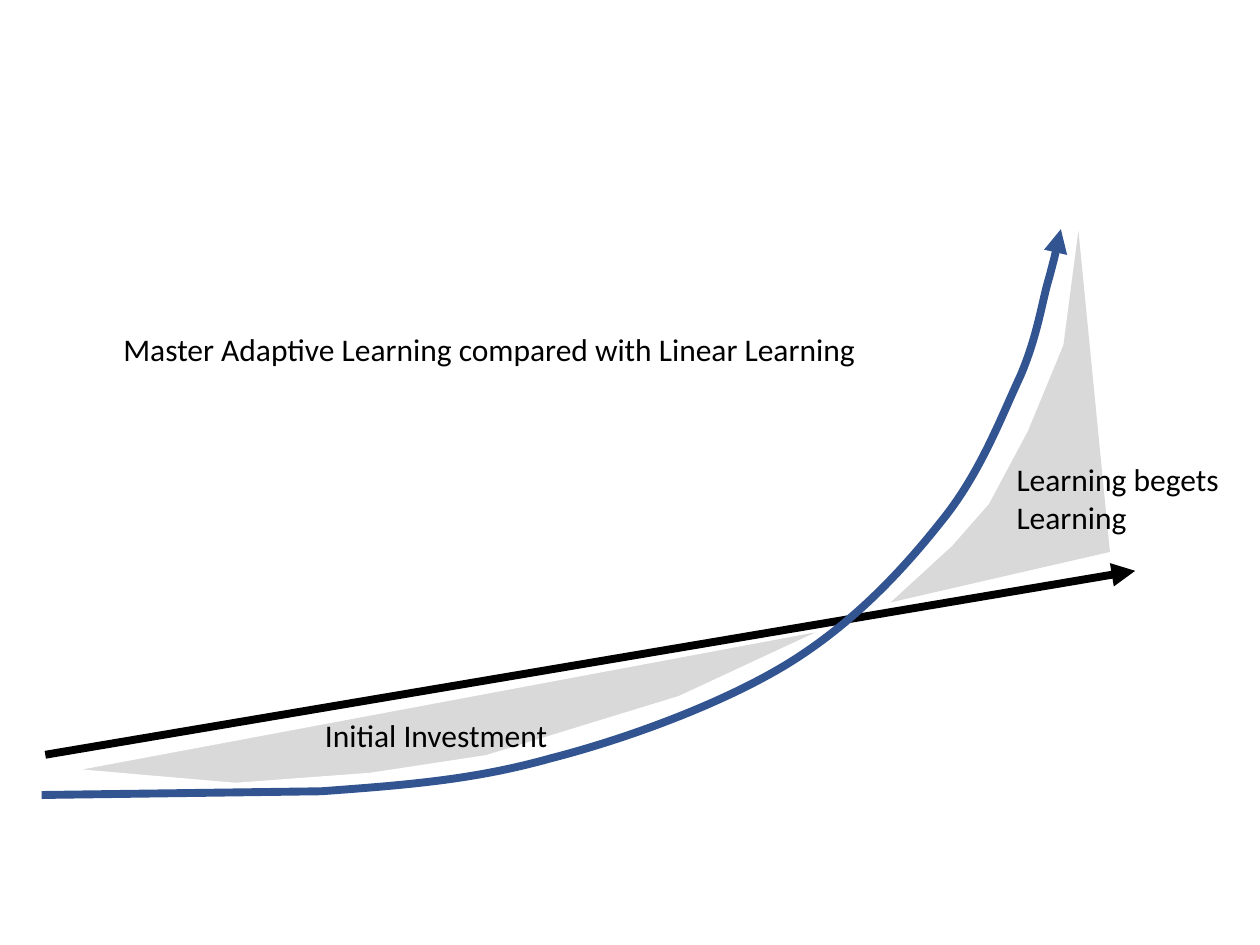
from dataclasses import dataclass

from lxml import etree
from pptx import Presentation
from pptx.dml.color import RGBColor
from pptx.enum.shapes import MSO_CONNECTOR
from pptx.enum.text import MSO_AUTO_SIZE
from pptx.oxml.ns import qn
from pptx.util import Pt

STRAIGHT = MSO_CONNECTOR.STRAIGHT
GROW = MSO_AUTO_SIZE.SHAPE_TO_FIT_TEXT
Point = tuple[float, float]


@dataclass(frozen=True)
class Theme:
    black: str = "000000"
    blue: str = "325491"
    gray: str = "D9D9D9"
    white: str = "FFFFFF"
    font: str = "Calibri"
    size: float = 18
    thick: float = 4.5
    thin: float = 1


@dataclass(frozen=True)
class Label:
    text: str
    left: float
    top: float
    width: float
    height: float
    wrap: bool = True


@dataclass(frozen=True)
class Region:
    points: list[Point]
    edge: str | None = None


THEME = Theme()

LINEAR = [(25.9, 431.3), (648.7, 326.2)]

# A start, the end of a straight run, then three points for each Bezier arc.
ADAPTIVE = [
    (23.8, 454.3), (183.6, 452.2),
    (232.6, 448.6), (270.7, 445.7), (314.6, 433.4),
    (359.3, 421.9), (413.3, 401.8), (450, 379.4),
    (487.4, 356.4), (515.5, 326.2), (537.8, 298.1),
    (560.2, 270.7), (572.4, 237.6), (583.2, 214.6),
    (593.3, 190.8), (595.4, 172.1), (599.8, 157.7),
    (603.4, 144), (604.8, 137.5), (606.2, 131),
]

REGIONS = [
    Region([(43.2, 439.9), (470.2, 360), (388.1, 398.2), (277.9, 432),
            (211.7, 442.1), (134.6, 447.8)], edge=THEME.white),
    Region([(509, 344.2), (634.3, 315.4), (616.3, 131.8), (607.7, 197.3),
            (587.5, 246.2), (565.2, 288), (544.3, 311.8)]),
]

LABELS = [
    Label("Master Adaptive Learning compared with Linear Learning",
          63.4, 185, 434.2, 29, wrap=False),
    Label("Initial Investment", 178.6, 405.4, 318.2, 29),
    Label("Learning begets Learning", 573.8, 259.2, 174.2, 51),
]


def rgb(code: str) -> RGBColor:
    return RGBColor.from_string(code)


def stroke(shape, color: str, width: float, arrow: bool = False) -> None:
    shape.line.color.rgb = rgb(color)
    shape.line.width = Pt(width)
    if arrow:
        line = shape.line._get_or_add_ln()
        etree.SubElement(line, qn("a:tailEnd"), type="triangle")


def outline(slide, points: list[Point], close: bool):
    first, *rest = [(Pt(x), Pt(y)) for x, y in points]
    pen = slide.shapes.build_freeform(*first)
    pen.add_line_segments(rest, close=close)
    shape = pen.convert_to_shape()
    shape.shadow.inherit = False
    return shape


def bend(shape) -> None:
    """Turn every three line segments after the first into one Bezier arc."""
    path = shape._element.spPr.find(".//" + qn("a:path"))
    steps = path.findall(qn("a:lnTo"))[1:]
    for i in range(0, len(steps), 3):
        arc = etree.SubElement(path, qn("a:cubicBezTo"))
        for step in steps[i:i + 3]:
            arc.append(step[0])
            path.remove(step)


def draw_line(slide, points: list[Point]) -> None:
    start, end = points
    line = slide.shapes.add_connector(
        STRAIGHT, *(Pt(v) for v in start + end))
    stroke(line, THEME.black, THEME.thick, arrow=True)
    etree.SubElement(line._element.spPr, qn("a:effectLst"))


def draw_curve(slide, points: list[Point]) -> None:
    curve = outline(slide, points, close=False)
    bend(curve)
    curve.fill.background()
    stroke(curve, THEME.blue, THEME.thick, arrow=True)


def draw_region(slide, region: Region) -> None:
    shape = outline(slide, region.points, close=True)
    shape.fill.solid()
    shape.fill.fore_color.rgb = rgb(THEME.gray)
    if region.edge:
        stroke(shape, region.edge, THEME.thin)
    else:
        shape.line.fill.background()


def write(frame, text: str, *, size: float, color: str, wrap: bool) -> None:
    frame.word_wrap = wrap
    frame.auto_size = GROW
    run = frame.paragraphs[0].add_run()
    run.text = text
    run.font.name = THEME.font
    run.font.size = Pt(size)
    run.font.color.rgb = rgb(color)


def draw_label(slide, label: Label) -> None:
    box = slide.shapes.add_textbox(
        Pt(label.left), Pt(label.top), Pt(label.width), Pt(label.height))
    write(box.text_frame, label.text, size=THEME.size, color=THEME.black,
          wrap=label.wrap)


def main() -> None:
    deck = Presentation()
    deck.slide_width, deck.slide_height = Pt(720), Pt(540)
    slide = deck.slides.add_slide(deck.slide_layouts[6])
    draw_line(slide, LINEAR)
    draw_curve(slide, ADAPTIVE)
    for region in REGIONS:
        draw_region(slide, region)
    for label in LABELS:
        draw_label(slide, label)
    deck.save("out.pptx")


if __name__ == "__main__":
    main()
